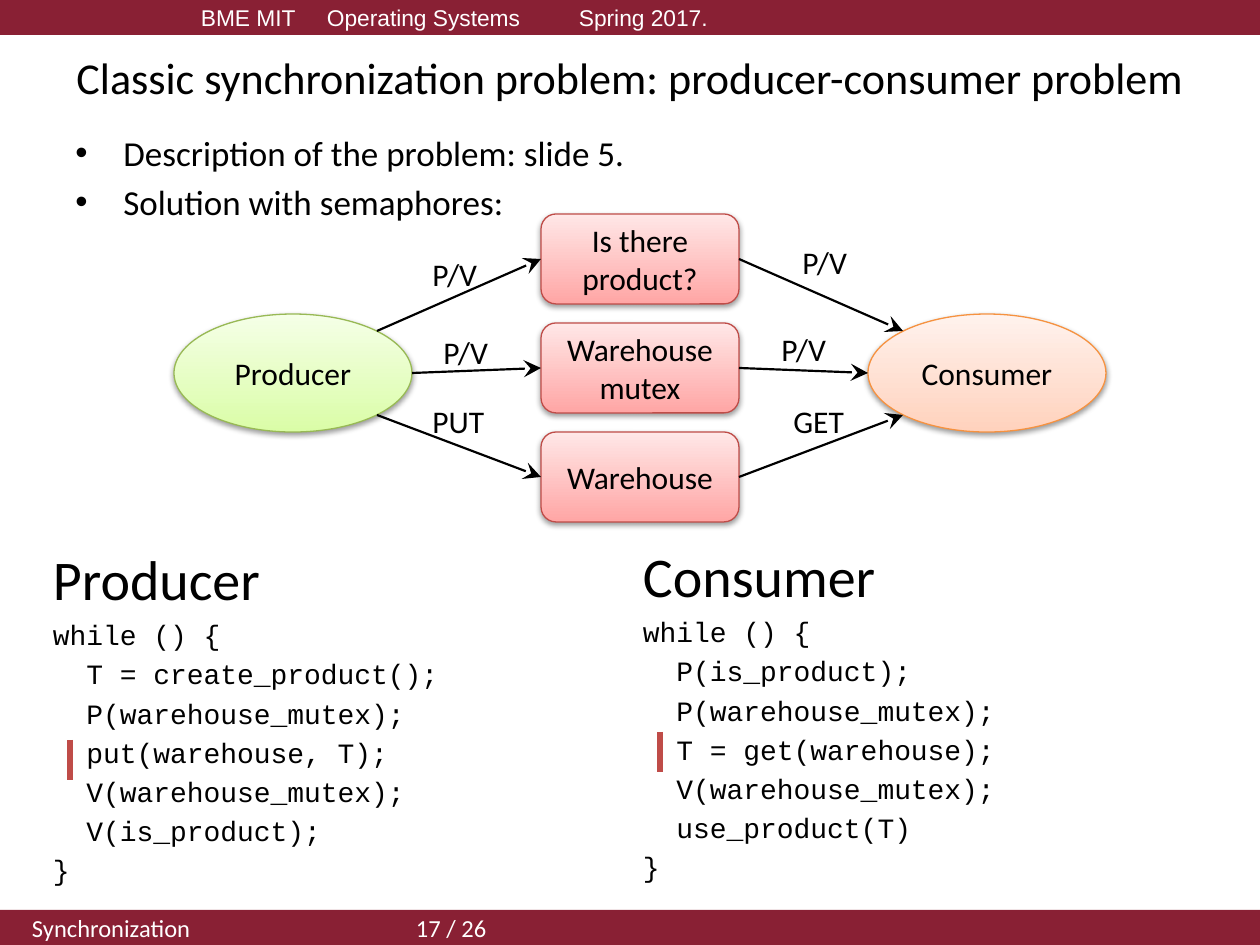
"""Build the producer-consumer synchronization slide."""
from lxml import etree
from pptx import Presentation, util as u
from pptx.dml.color import RGBColor
from pptx.enum import shapes as s, text as t
from pptx.oxml import parse_xml
from pptx.oxml.ns import nsdecls, qn

WINE = RGBColor(0x89, 0x20, 0x34)
WHITE = RGBColor(0xFF, 0xFF, 0xFF)
BLACK = RGBColor(0, 0, 0)
RED = RGBColor(0xBF, 0x4C, 0x48)
PINK = RGBColor(0xFF, 0xA6, 0xA5)
BLUSH = RGBColor(0xFF, 0xE7, 0xE7)
GREEN = RGBColor(0x98, 0xB9, 0x55)
LIME = RGBColor(0xDA, 0xFD, 0xA7)
MINT = RGBColor(0xF5, 0xFF, 0xE7)
AMBER = RGBColor(0xF6, 0x92, 0x40)
PEACH = RGBColor(0xFF, 0xD2, 0xBD)
CREAM = RGBColor(0xFF, 0xF2, 0xED)
KIND = s.MSO_SHAPE
SHADE = (f'<a:outerShdw {nsdecls("a")} blurRad="40000" dist="20000" dir="5400000" '
         'rotWithShape="0"><a:srgbClr val="000000"><a:alpha val="38000"/>'
         '</a:srgbClr></a:outerShdw>')


def px(*nums):
    return [u.Emu(round(n * 914400 / 126)) for n in nums]


def ink(paras, size, color=BLACK, face="Calibri", align=t.PP_ALIGN.LEFT):
    for para in paras:
        para.alignment = align
        for run in para.runs:
            run.font.size = u.Pt(size)
            run.font.name = face
            run.font.color.rgb = color


prs = Presentation()
prs.slide_width, prs.slide_height = px(1260, 945)
slide = prs.slides.add_slide(prs.slide_layouts[5])
draw = slide.shapes

bars = [
    (0, 201, "BME MIT\tOperating Systems\tSpring 2017.", 13, "Arial", [126, 378]),
    (910, 32, "Synchronization\t17 / 26", 14, "Calibri", [384]),
]
for top, left, words, size, face, tabs in bars:
    bar = draw.add_shape(KIND.RECTANGLE, *px(0, top, 1260, 35))
    bar.shadow.inherit = False
    bar.fill.solid()
    bar.fill.fore_color.rgb = WINE
    bar.line.fill.background()
    frame = bar.text_frame
    frame.margin_left = px(left)[0]
    frame.vertical_anchor = t.MSO_ANCHOR.MIDDLE
    frame.text = words
    stops = etree.SubElement(frame.paragraphs[0]._p.get_or_add_pPr(), qn("a:tabLst"))
    for pos in px(*tabs):
        etree.SubElement(stops, qn("a:tab"), pos=str(pos), algn="l")
    ink(frame.paragraphs, size, WHITE, face)

title = draw.title
title.left, title.top, title.width, title.height = px(63, 38, 1134, 77)
frame = title.text_frame
frame.text = "Classic synchronization problem: producer-consumer problem"
frame.auto_size = t.MSO_AUTO_SIZE.NONE
frame.margin_left = frame.margin_right = 0
frame.vertical_anchor = t.MSO_ANCHOR.MIDDLE
ink(frame.paragraphs, 25.2, align=t.PP_ALIGN.CENTER)

frame = draw.add_textbox(*px(63, 125, 1134, 93)).text_frame
frame.word_wrap = True
frame.text = "Description of the problem: slide 5.\nSolution with semaphores:"
for para in frame.paragraphs:
    props = para._p.get_or_add_pPr()
    props.set("marL", str(px(48)[0]))
    props.set("indent", str(px(-48)[0]))
    etree.SubElement(props, qn("a:buFont"), typeface="Arial")
    etree.SubElement(props, qn("a:buChar"), char="•")
frame.paragraphs[1].space_before = u.Pt(4)
ink(frame.paragraphs, 20)

nodes = [
    ("Producer", KIND.OVAL, 174, 314, 238, 118, GREEN, LIME, MINT),
    ("Consumer", KIND.OVAL, 868, 314, 238, 118, AMBER, PEACH, CREAM),
]
stores = ["Is there product?", "Warehouse mutex", "Warehouse"]
for row, name in enumerate(stores):
    nodes.append((name, KIND.ROUNDED_RECTANGLE, 541, 214 + 109 * row, 198, 90,
                  RED, PINK, BLUSH))
made = []
for name, kind, left, top, wide, high, edge, low, pale in nodes:
    node = draw.add_shape(kind, *px(left, top, wide, high))
    node.shadow.inherit = False
    node._element.spPr.find(qn("a:effectLst")).append(parse_xml(SHADE))
    node.fill.gradient()
    node.fill.gradient_angle = 90
    for stop, color in zip(node.fill.gradient_stops, (low, pale)):
        stop.color.rgb = color
    node.line.color.rgb = edge
    node.line.width = u.Pt(0.75)
    frame = node.text_frame
    frame.word_wrap = True
    frame.vertical_anchor = t.MSO_ANCHOR.MIDDLE
    frame.text = name
    ink(frame.paragraphs, 18, align=t.PP_ALIGN.CENTER)
    made.append(node)

lines = []
ports = [(377, 331, 903), (412, 373, 868), (377, 415, 903)]
for box, (left, y, right) in zip(made[2:], ports):
    into = draw.add_connector(s.MSO_CONNECTOR.STRAIGHT, *px(left, y, 541, y))
    into.end_connect(box, 1)
    out = draw.add_connector(s.MSO_CONNECTOR.STRAIGHT, *px(739, y, right, y))
    out.begin_connect(box, 3)
    lines += [(into, BLACK, 1.25), (out, BLACK, 1.25)]
for x, y in [(70, 740), (660, 732)]:
    mark = draw.add_connector(s.MSO_CONNECTOR.STRAIGHT, *px(x, y, x, y + 40))
    lines.append((mark, RED, 3))
for line, color, width in lines:
    line.line.color.rgb = color
    line.line.width = u.Pt(width)
    etree.SubElement(line._element.spPr, qn("a:effectLst"))
    if color == BLACK:
        etree.SubElement(line.line._get_or_add_ln(), qn("a:tailEnd"),
                         type="stealth", w="lg", len="lg")

tags = [
    ("P/V", 420, 249, 70), ("P/V", 431, 327, 70), ("PUT", 420, 396, 82),
    ("P/V", 790, 237, 70), ("P/V", 769, 324, 70), ("GET", 781, 396, 82),
]
for name, left, top, wide in tags:
    frame = draw.add_textbox(*px(left, top, wide, 50)).text_frame
    frame.word_wrap = False
    frame.text = name
    ink(frame.paragraphs, 18)

codes = [
    (53, 545, """Producer
while () {
  T = create_product();
  P(warehouse_mutex);
  put(warehouse, T);
  V(warehouse_mutex);
  V(is_product);
}"""),
    (643, 542, """Consumer
while () {
  P(is_product);
  P(warehouse_mutex);
  T = get(warehouse);
  V(warehouse_mutex);
  use_product(T)
}"""),
]
for left, top, words in codes:
    frame = draw.add_textbox(*px(left, top, 560, 353)).text_frame
    frame.word_wrap = True
    frame.margin_left = frame.margin_top = frame.margin_right = frame.margin_bottom = 0
    frame.text = words
    head, *code = frame.paragraphs
    ink([head], 32)
    ink(code, 16, face="Courier New")
    for para in code:
        para.space_before = u.Pt(3.2)

prs.save("out.pptx")
